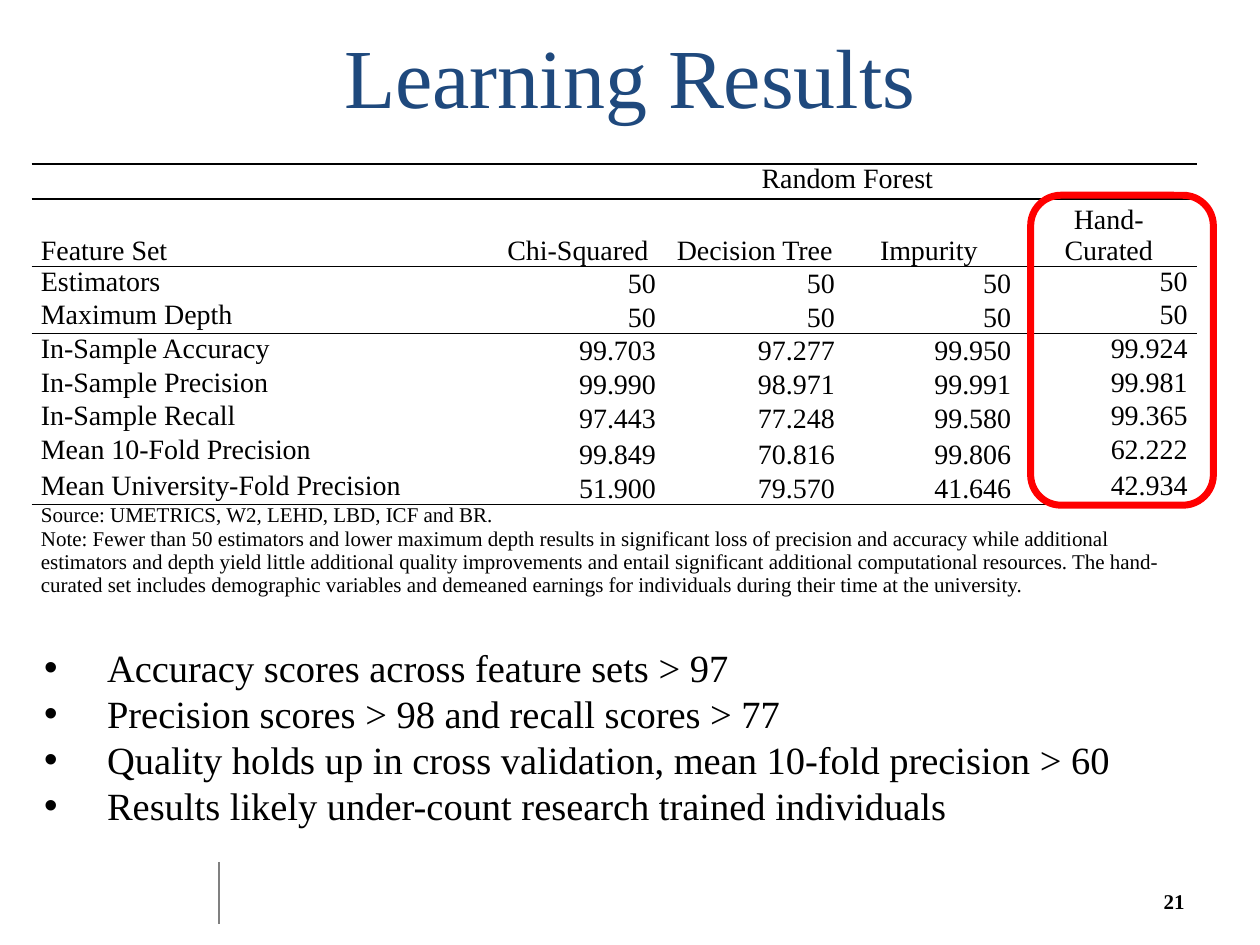
from lxml import etree
from pptx import Presentation
from pptx import util as u
from pptx.dml.color import RGBColor
from pptx.enum import shapes, text
from pptx.oxml.ns import qn

FACE = "Times New Roman"
BLACK = RGBColor(0x00, 0x00, 0x00)
NAVY = RGBColor(0x1F, 0x49, 0x7D)
RED = RGBColor(0xFF, 0x00, 0x00)
GRAY = RGBColor(0x80, 0x80, 0x80)
PLAIN_STYLE = "{2D5ABB26-0587-4C30-8999-92F81FD0307C}"
LEFT, CENTER, RIGHT = text.PP_ALIGN.LEFT, text.PP_ALIGN.CENTER, text.PP_ALIGN.RIGHT
TOP, MIDDLE, BOTTOM = text.MSO_ANCHOR.TOP, text.MSO_ANCHOR.MIDDLE, text.MSO_ANCHOR.BOTTOM

LINE_HEIGHT = u.Pt(19.2)
COLUMN_WIDTHS = [u.Inches(width) for width in (3.7, 1.33, 1.42, 1.4, 1.4)]
ROW_HEIGHTS = ([LINE_HEIGHT, 2 * LINE_HEIGHT] + [LINE_HEIGHT] * 5
               + [u.Inches(0.29), LINE_HEIGHT, u.Inches(1.1)])
RULED_ROWS = (-1, 0, 1, 3, 8)
RESULTS = [
    ["", "Random Forest", "", "", ""],
    ["Feature Set", "Chi-Squared ", "Decision Tree ", "Impurity ", "Hand-Curated"],
    ["Estimators", "50", "50", "50", "50"],
    ["Maximum Depth", "50", "50", "50", "50"],
    ["In-Sample Accuracy", "99.703", "97.277", "99.950", "99.924"],
    ["In-Sample Precision", "99.990", "98.971", "99.991", "99.981"],
    ["In-Sample Recall", "97.443", "77.248", "99.580", "99.365"],
    ["Mean 10-Fold Precision", "99.849", "70.816", "99.806", "62.222"],
    ["Mean University-Fold Precision", "51.900", "79.570", "41.646", "42.934"],
    ["Source: UMETRICS, W2, LEHD, LBD, ICF and BR.\n"
     "Note: Fewer than 50 estimators and lower maximum depth results in significant "
     "loss of precision and accuracy while additional estimators and depth yield little "
     "additional quality improvements and entail significant additional computational "
     "resources. The hand-curated set includes demographic variables and demeaned "
     "earnings for individuals during their time at the university.", "", "", "", ""],
]
FINDINGS = [
    "Accuracy scores across feature sets > 97",
    "Precision scores > 98 and recall scores > 77",
    "Quality holds up in cross validation, mean 10-fold precision > 60",
    "Results likely under-count research trained individuals",
]


def set_all(target, values):
    """Set every attribute named in a dict of format values."""
    for name, value in values.items():
        setattr(target, name, value)


def place(shape, left, top, width, height):
    """Move and size a shape, in inches."""
    box = dict(left=left, top=top, width=width, height=height)
    set_all(shape, {side: u.Inches(length) for side, length in box.items()})


def write(frame, lines, size, align=LEFT, color=BLACK, bold=False):
    """Fill a text frame with one formatted paragraph per line."""
    for index, line in enumerate(lines):
        paragraph = frame.paragraphs[0] if index == 0 else frame.add_paragraph()
        paragraph.alignment = align
        run = paragraph.add_run()
        run.text = line
        set_all(run.font, dict(name=FACE, size=u.Pt(size), bold=bold))
        run.font.color.rgb = color


def add_title(slide, title):
    """Fill the title placeholder."""
    heading = slide.shapes.title
    place(heading, 0.5, -0.03, 9, 1.25)
    heading.text_frame.vertical_anchor = MIDDLE
    write(heading.text_frame, [title], 48, CENTER, NAVY)


def add_findings(slide, findings):
    """Fill the body placeholder with a bulleted list."""
    body = slide.placeholders[1]
    place(body, 0.25, 5.06, 9.5, 1.58)
    write(body.text_frame, findings, 22)
    for paragraph in body.text_frame.paragraphs:
        paragraph.space_before = u.Pt(0)
        properties = paragraph._p.get_or_add_pPr()
        properties.set("marL", str(u.Inches(0.5)))
        properties.set("indent", str(-u.Inches(0.5)))
        etree.SubElement(properties, qn("a:buFont"), typeface="Arial")
        etree.SubElement(properties, qn("a:buChar"), char="•")


def set_border(cell, side, ruled):
    """Rule the top (T) or bottom (B) of a cell in black, or leave it open."""
    border = etree.Element(qn(f"a:ln{side}"), w=str(u.Pt(1) if ruled else 0))
    fill = etree.SubElement(border, qn("a:solidFill" if ruled else "a:noFill"))
    if ruled:
        etree.SubElement(fill, qn("a:srgbClr"), val=str(BLACK))
    cell._tc.get_or_add_tcPr().insert(0, border)


def cell_layout(row, column):
    """Return the alignment and anchor that suit a cell's role."""
    last_row, last_column = len(RESULTS) - 1, len(COLUMN_WIDTHS) - 1
    if row in (0, last_row):
        return (LEFT if row else CENTER), TOP
    if row == 1:
        return (CENTER if column else LEFT), BOTTOM
    return (RIGHT if column else LEFT), (TOP if column in (0, last_column) else BOTTOM)


def add_results(slide):
    """Add the ruled table of learning results."""
    frame = slide.shapes.add_table(
        len(ROW_HEIGHTS), len(COLUMN_WIDTHS), u.Inches(0.25), u.Inches(1.3),
        sum(COLUMN_WIDTHS), sum(ROW_HEIGHTS))
    table = frame.table
    set_all(table, dict(first_row=False, horz_banding=False))
    table._tbl.tblPr.find(qn("a:tableStyleId")).text = PLAIN_STYLE
    for column, width in zip(table.columns, COLUMN_WIDTHS):
        column.width = width
    for row, height in zip(table.rows, ROW_HEIGHTS):
        row.height = height
    last_row = len(RESULTS) - 1
    table.cell(0, 1).merge(table.cell(0, 4))
    table.cell(last_row, 0).merge(table.cell(last_row, 4))
    margins = dict(margin_left=u.Pt(5.4), margin_right=u.Pt(5.4),
                   margin_top=0, margin_bottom=0)
    for row, values in enumerate(RESULTS):
        for column, value in enumerate(values):
            cell = table.cell(row, column)
            align, anchor = cell_layout(row, column)
            set_all(cell, dict(margins, vertical_anchor=anchor))
            cell.fill.background()
            write(cell.text_frame, value.split("\n"), 12 if row == last_row else 16, align)
            set_border(cell, "B", row in RULED_ROWS)
            set_border(cell, "T", row - 1 in RULED_ROWS)


def add_highlight(slide):
    """Outline the hand-curated column."""
    outline = slide.shapes.add_shape(
        shapes.MSO_SHAPE.ROUNDED_RECTANGLE,
        u.Inches(8.18), u.Inches(1.55), u.Inches(1.45), u.Inches(2.46))
    outline.shadow.inherit = False
    outline.fill.background()
    outline.line.color.rgb = RED
    outline.line.width = u.Pt(4)


def add_footer(slide, number):
    """Add the footer divider and the slide number."""
    divider = slide.shapes.add_connector(
        shapes.MSO_CONNECTOR.STRAIGHT,
        u.Inches(1.74), u.Inches(6.84), u.Inches(1.74), u.Inches(7.33))
    divider.line.color.rgb = GRAY
    divider.line.width = u.Pt(1.25)
    etree.SubElement(divider._element.spPr, qn("a:effectLst"))
    page = slide.shapes.add_textbox(
        u.Inches(7.17), u.Inches(6.95), u.Inches(2.33), u.Inches(0.4))
    set_all(page.text_frame, dict(word_wrap=True, vertical_anchor=MIDDLE))
    write(page.text_frame, [number], 12, RIGHT, bold=True)


def main():
    """Build the slide and save it."""
    deck = Presentation()
    set_all(deck, dict(slide_width=u.Inches(10), slide_height=u.Inches(7.5)))
    slide = deck.slides.add_slide(deck.slide_layouts[1])
    add_title(slide, "Learning Results")
    add_findings(slide, FINDINGS)
    add_results(slide)
    add_highlight(slide)
    add_footer(slide, "21")
    deck.save("out.pptx")


if __name__ == "__main__":
    main()
